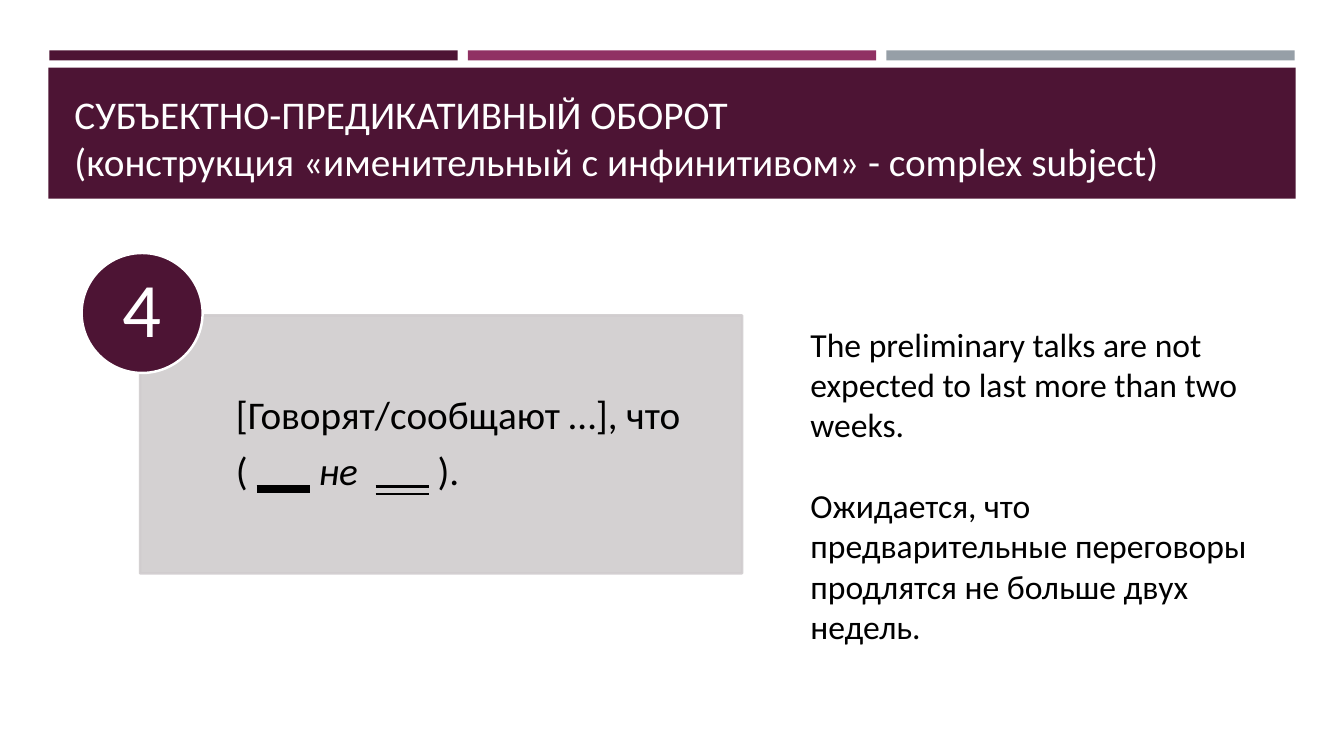
"""Build a grammar slide on the complex subject with a rule card and an example."""
from lxml import etree
from pptx import Presentation
from pptx.dml.color import RGBColor
from pptx.enum.shapes import MSO_SHAPE
from pptx.enum.text import MSO_ANCHOR, MSO_TEXT_UNDERLINE_TYPE, PP_ALIGN
from pptx.oxml.ns import qn
from pptx.util import Inches, Pt

RECT, OVAL = MSO_SHAPE.RECTANGLE, MSO_SHAPE.OVAL
TOP, MIDDLE, BOTTOM = MSO_ANCHOR.TOP, MSO_ANCHOR.MIDDLE, MSO_ANCHOR.BOTTOM
LEFT, CENTER = PP_ALIGN.LEFT, PP_ALIGN.CENTER
HEAVY = MSO_TEXT_UNDERLINE_TYPE.HEAVY_LINE
DOUBLE = MSO_TEXT_UNDERLINE_TYPE.DOUBLE_LINE

PLUM, BERRY, STEEL, GREY = "4D1434", "903163", "969FA7", "D0CCCE"
WHITE, BLACK = "FFFFFF", "000000"
FONT = "Calibri"

TITLE = [
    "СУБЪЕКТНО-ПРЕДИКАТИВНЫЙ ОБОРОТ",
    "(конструкция «именительный с инфинитивом» - complex subject)",
]
BLANK = "      "
RULE = [
    "[Говорят/сообщают …], что",
    [
        ("( ", {}),
        (BLANK, {"underline": HEAVY}),
        (" ", {}),
        ("не  ", {"italic": True}),
        (BLANK, {"underline": DOUBLE, "bold": True}),
        (" ).", {}),
    ],
]
NUMBER = ["4"]
EXAMPLE = [
    "The preliminary talks are not expected to last more than two weeks.",
    "Ожидается, что предварительные переговоры продлятся не больше двух недель.",
]
BARS = [PLUM, BERRY, STEEL]
BAR_X, BAR_Y, BAR_W, BAR_H, BAR_STEP = 0.49, 0.5, 4.05, 0.1, 4.15


def color(code):
    return RGBColor.from_string(code)


def fade(fill, share):
    tint = fill._xPr.find(qn("a:solidFill"))[0]
    etree.SubElement(tint, qn("a:alpha")).set("val", str(share * 1000))


def add_box(slide, kind, at, fill, line=None, share=None):
    box = slide.shapes.add_shape(kind, *map(Inches, at))
    box.shadow.inherit = False
    box.fill.solid()
    box.fill.fore_color.rgb = color(fill)
    if line:
        box.line.width = Pt(1.75)
        box.line.color.rgb = color(line)
    else:
        box.line.fill.background()
    if share:
        fade(box.fill, share)
        fade(box.line.fill, share)


def add_text(slide, at, lines, size, tint, anchor=TOP, align=LEFT,
             inset=(0.1, 0.05, 0.1, 0.05), pitch=1.0, after=0):
    frame = slide.shapes.add_textbox(*map(Inches, at)).text_frame
    frame.word_wrap = True
    frame.vertical_anchor = anchor
    (frame.margin_left, frame.margin_top,
     frame.margin_right, frame.margin_bottom) = map(Inches, inset)
    for i, line in enumerate(lines):
        para = frame.add_paragraph() if i else frame.paragraphs[0]
        para.alignment = align
        para.line_spacing = pitch
        para.space_after = Pt(after)
        para.font.name = FONT
        para.font.size = Pt(size)
        para.font.color.rgb = color(tint)
        for text, style in [(line, {})] if isinstance(line, str) else line:
            run = para.add_run()
            run.text = text
            for key, value in style.items():
                setattr(run.font, key, value)


def main():
    deck = Presentation()
    deck.slide_width, deck.slide_height = Inches(13.33), Inches(7.5)
    slide = deck.slides.add_slide(deck.slide_layouts[6])

    for i, fill in enumerate(BARS):
        add_box(slide, RECT, (BAR_X + i * BAR_STEP, BAR_Y, BAR_W, BAR_H), fill)
    add_box(slide, RECT, (0.48, 0.67, 12.37, 1.3), PLUM)
    add_text(slide, (0.64, 0.77, 12.06, 1.11), TITLE, 28, WHITE, BOTTOM)

    add_box(slide, RECT, (1.39, 3.13, 5.97, 2.56), GREY, GREY, 90)
    add_text(slide, (2.34, 3.13, 5.01, 2.56), RULE, 28, BLACK, MIDDLE,
             inset=(0, 0.22, 0.22, 0.22), pitch=0.9, after=9.8)
    add_box(slide, OVAL, (0.81, 2.51, 1.2, 1.19), PLUM, WHITE)
    add_text(slide, (0.98, 2.68, 0.85, 0.84), NUMBER, 55, WHITE, MIDDLE,
             CENTER, inset=(0, 0, 0, 0), pitch=0.9)

    add_text(slide, (7.94, 3.16, 5, 3.33), EXAMPLE, 24, BLACK, after=29)
    deck.save("out.pptx")


if __name__ == "__main__":
    main()
